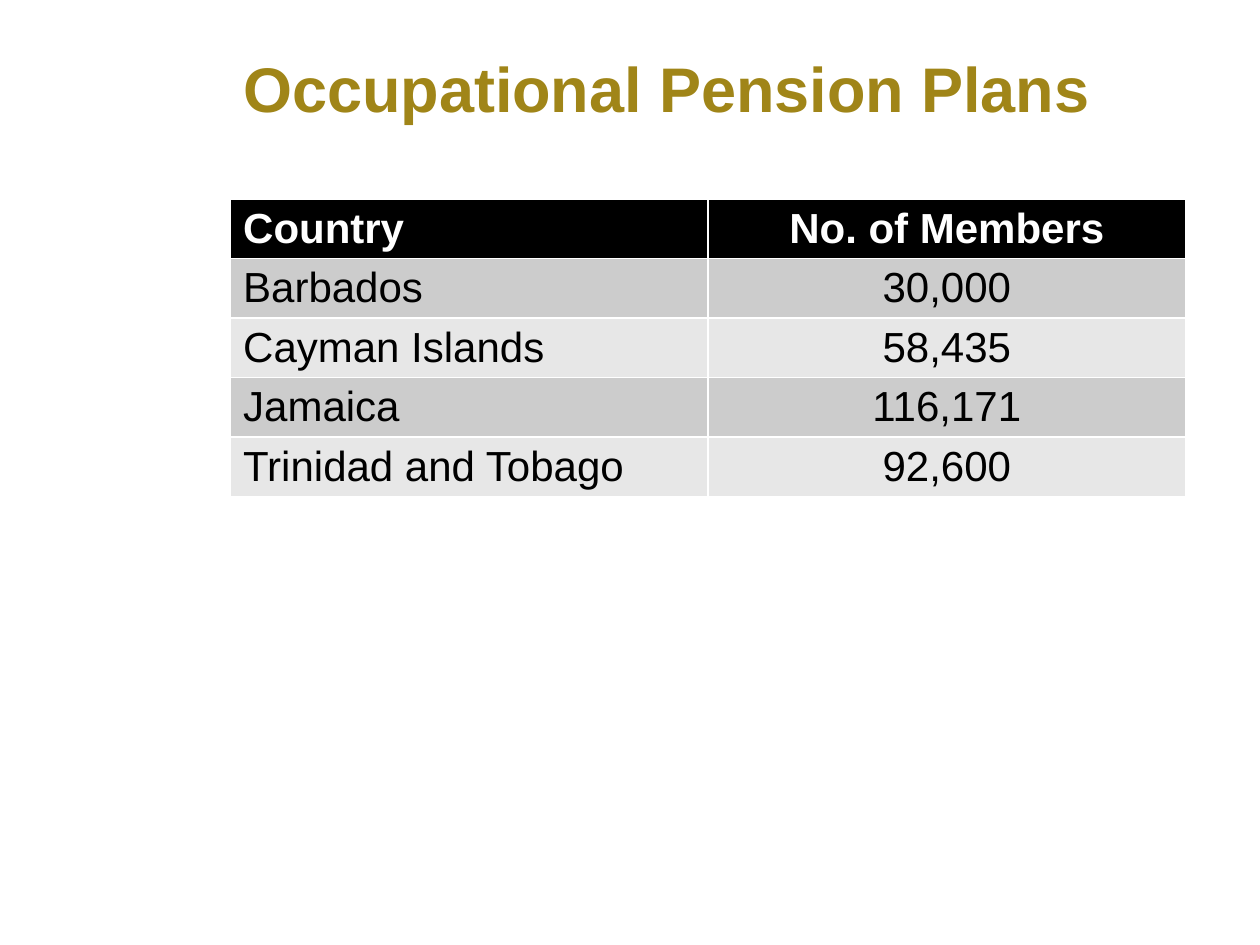
import pptx
import pptx.util
import pptx.dml.color
import pptx.enum.text

Pt = pptx.util.Pt
RGB = pptx.dml.color.RGBColor.from_string
ALIGN = pptx.enum.text.PP_ALIGN

COLORS = {
    "gold": "A08518",
    "head": "000000",
    "dark": "CCCCCC",
    "light": "E7E7E7",
    "white": "FFFFFF",
    "black": "000000",
}
LEFT, WIDTH = Pt(131.76), Pt(545.76)


def style(para, size, color, bold, align):
    para.alignment = align
    for run in para.runs:
        run.font.name = "Arial"
        run.font.size = Pt(size)
        run.font.bold = bold
        run.font.color.rgb = RGB(COLORS[color])


deck = pptx.Presentation()
deck.slide_width, deck.slide_height = Pt(720), Pt(540)
slide = deck.slides.add_slide(deck.slide_layouts[5])

# Title
title = slide.shapes.title
title.left, title.top, title.width, title.height = LEFT, Pt(9.36), WIDTH, Pt(80.64)
frame = title.text_frame
frame.text = "Occupational Pension Plans"
frame.auto_size = pptx.enum.text.MSO_AUTO_SIZE.NONE
frame.vertical_anchor = pptx.enum.text.MSO_ANCHOR.MIDDLE
style(frame.paragraphs[0], 36, "gold", True, ALIGN.LEFT)

# Members table; the default table style draws the white rules
rows = [
    ("Country", "No. of Members"),
    ("Barbados", "30,000"),
    ("Cayman Islands", "58,435"),
    ("Jamaica", "116,171"),
    ("Trinidad and Tobago", "92,600"),
]
table = slide.shapes.add_table(
    len(rows), 2, LEFT, Pt(113.76), WIDTH, Pt(146)).table

for r, row in enumerate(rows):
    head = r == 0
    fill = "head" if head else ("dark" if r % 2 else "light")
    for c, text in enumerate(row):
        cell = table.cell(r, c)
        cell.fill.solid()
        cell.fill.fore_color.rgb = RGB(COLORS[fill])
        cell.text_frame.text = text
        style(cell.text_frame.paragraphs[0], 24, "white" if head else "black",
              head, ALIGN.CENTER if c else ALIGN.LEFT)

deck.save("out.pptx")
